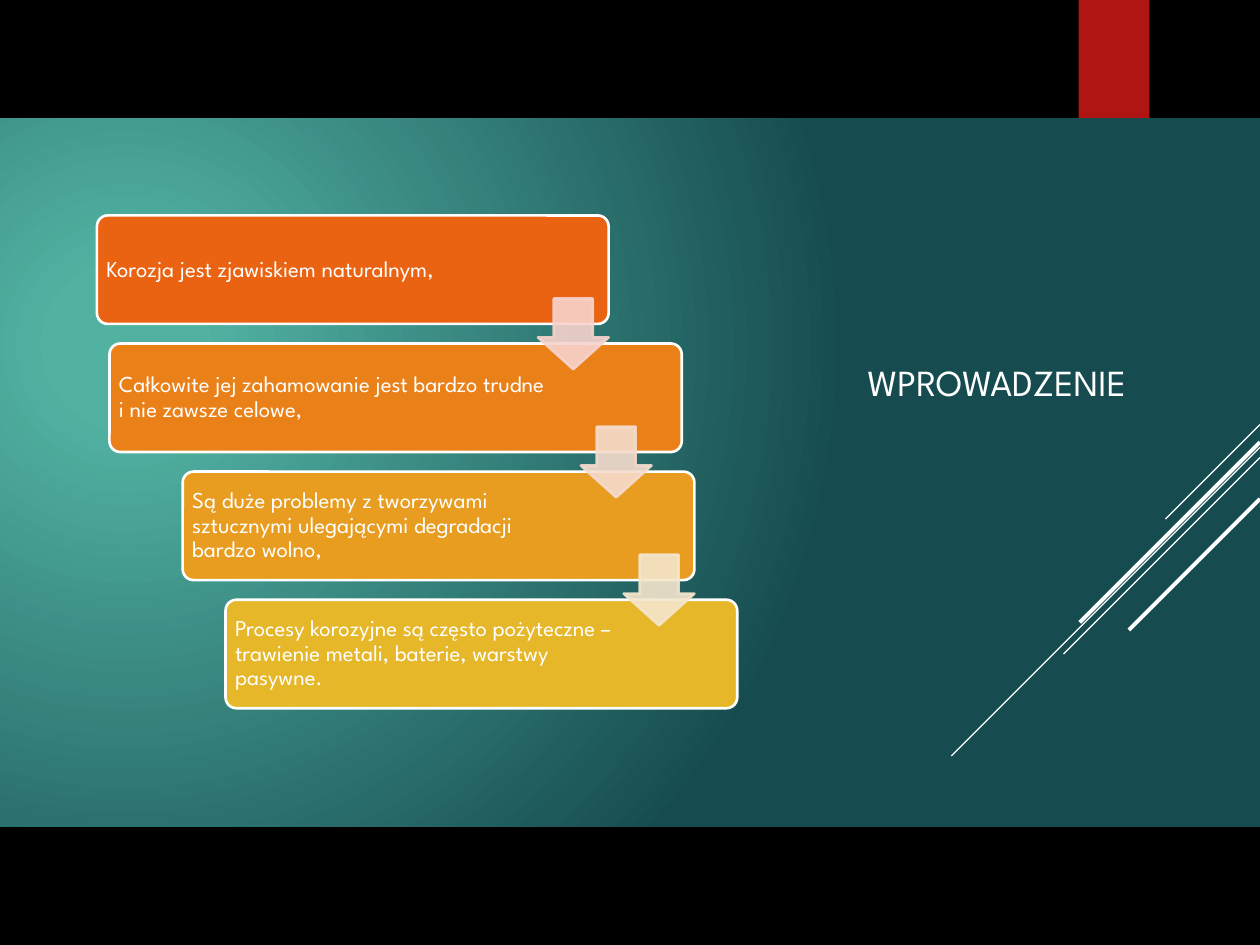
from lxml.etree import SubElement
from pptx import Presentation
from pptx.dml.color import RGBColor as RGB
from pptx.enum.shapes import MSO_CONNECTOR as LINK, MSO_SHAPE as KIND
from pptx.enum.text import MSO_ANCHOR as ANCHOR, PP_ALIGN as ALIGN
from pptx.oxml.ns import qn
from pptx.util import Pt

FONT = "League Spartan"
WHITE = RGB(0xFF, 0xFF, 0xFF)
BLACK = RGB(0, 0, 0)
RED = RGB(0xB0, 0x15, 0x13)
MINT = RGB(0x51, 0xB2, 0xA2)
TEAL = RGB(0x16, 0x4C, 0x50)

# Text, box fill, extra box width, text width
STEPS = [
    ("Korozja jest zjawiskiem naturalnym,",
     RGB(0xEA, 0x63, 0x12), 0, 220.3),
    ("Całkowite jej zahamowanie jest bardzo trudne i nie zawsze celowe,",
     RGB(0xEA, 0x81, 0x18), 34.6, 250.6),
    ("Są duże problemy z tworzywami sztucznymi ulegającymi degradacji "
     "bardzo wolno,",
     RGB(0xE8, 0x9D, 0x21), 0, 224.6),
    ("Procesy korozyjne są często pożyteczne – trawienie metali, baterie, "
     "warstwy pasywne.",
     RGB(0xE6, 0xB7, 0x29), 0, 223.9),
]
ARROWS = [RGB(0xF7, 0xD3, 0xCC), RGB(0xF6, 0xDC, 0xCD), RGB(0xF5, 0xE6, 0xCD)]

# Start height, run, line width
RAYS = [(0, 54, 0.75), (13, 176.4, 0.75), (18.8, 112.3, 0.75),
        (10.1, 103, 2.25), (42.5, 74.9, 2.25)]


def add_shape(slide, kind, x, y, w, h, fill=None, line=None):
    shape = slide.shapes.add_shape(kind, Pt(x), Pt(y), Pt(w), Pt(h))
    shape.shadow.inherit = False
    if fill is not None:
        shape.fill.solid()
        shape.fill.fore_color.rgb = fill
    if line is None:
        shape.line.fill.background()
    else:
        shape.line.color.rgb = line
        shape.line.width = Pt(1.5)
    return shape


def set_text(shape, text, size, insets):
    frame = shape.text_frame
    frame.text = text
    frame.word_wrap = True
    frame.vertical_anchor = ANCHOR.MIDDLE
    (frame.margin_left, frame.margin_top,
     frame.margin_right, frame.margin_bottom) = map(Pt, insets)
    para = frame.paragraphs[0]
    para.alignment = ALIGN.LEFT
    para.line_spacing = 0.9
    para.font.size = Pt(size)
    para.font.name = FONT
    para.font.color.rgb = WHITE


def add_panel(slide, x, y, w, h):
    panel = add_shape(slide, KIND.RECTANGLE, x, y, w, h)
    fill = panel.fill
    fill.gradient()
    for stop, color, place in zip(fill.gradient_stops, (MINT, TEAL), (0.1, 1)):
        stop.color.rgb = color
        stop.position = place
    # Turn the linear gradient into a radial one, centred at upper left
    grad = panel.element.spPr.find(qn("a:gradFill"))
    grad.remove(grad.find(qn("a:lin")))
    path = SubElement(grad, qn("a:path"), path="circle")
    SubElement(path, qn("a:fillToRect"),
               l="10000", t="32000", r="90000", b="68000")


def add_rays(slide, right, top):
    for drop, run, width in RAYS:
        y = top + drop
        ray = slide.shapes.add_connector(
            LINK.STRAIGHT, Pt(right), Pt(y), Pt(right - run), Pt(y + run))
        ray.line.color.rgb = WHITE
        ray.line.width = Pt(width)
        SubElement(ray.element.spPr, qn("a:effectLst"))


def add_title(slide, x, y, w, h):
    title = slide.shapes.title
    title.left, title.top, title.width, title.height = map(Pt, (x, y, w, h))
    set_text(title, "WPROWADZENIE", 21, (5.4, 2.7, 5.4, 2.7))
    # Bring the title in front of the panel
    slide.shapes.element.append(title.element)


def add_steps(slide, x, y, w, h):
    dx, dy, side = 24.5, 73.2, 40.4
    # Staggered boxes; a wider one grows evenly to both sides
    for i, (text, color, extra, room) in enumerate(STEPS):
        wide = w + extra
        box = add_shape(slide, KIND.ROUNDED_RECTANGLE, x + i * dx - extra / 2,
                        y + i * dy, wide, h, color, WHITE)
        box.adjustments[0] = 0.1
        set_text(box, text, 13, (3.6, 3.6, wide - room, 3.6))
    # Arrows from box to box
    for i, color in enumerate(ARROWS):
        arrow = add_shape(slide, KIND.DOWN_ARROW, x + i * dx + w - side,
                          y + i * dy + 47.5, side, side, color, color)
        arrow.adjustments[0] = 0.55
        arrow.adjustments[1] = 0.45
        for tint in arrow.element.spPr.iter(qn("a:srgbClr")):
            SubElement(tint, qn("a:alpha"), val="90000")


def main():
    deck = Presentation()
    deck.slide_width, deck.slide_height = Pt(720), Pt(540)
    slide = deck.slides.add_slide(deck.slide_layouts[5])
    back = slide.background.fill
    back.solid()
    back.fore_color.rgb = BLACK

    add_shape(slide, KIND.RECTANGLE, 616.3, 0, 40.5, 90, RED)
    add_panel(slide, 0, 67.5, 720, 405)
    add_rays(slide, 720, 242.6)
    add_title(slide, 490.3, 123.8, 180, 191.5)
    add_steps(slide, 55.4, 123.1, 292.4, 62)
    deck.save("out.pptx")


if __name__ == "__main__":
    main()
